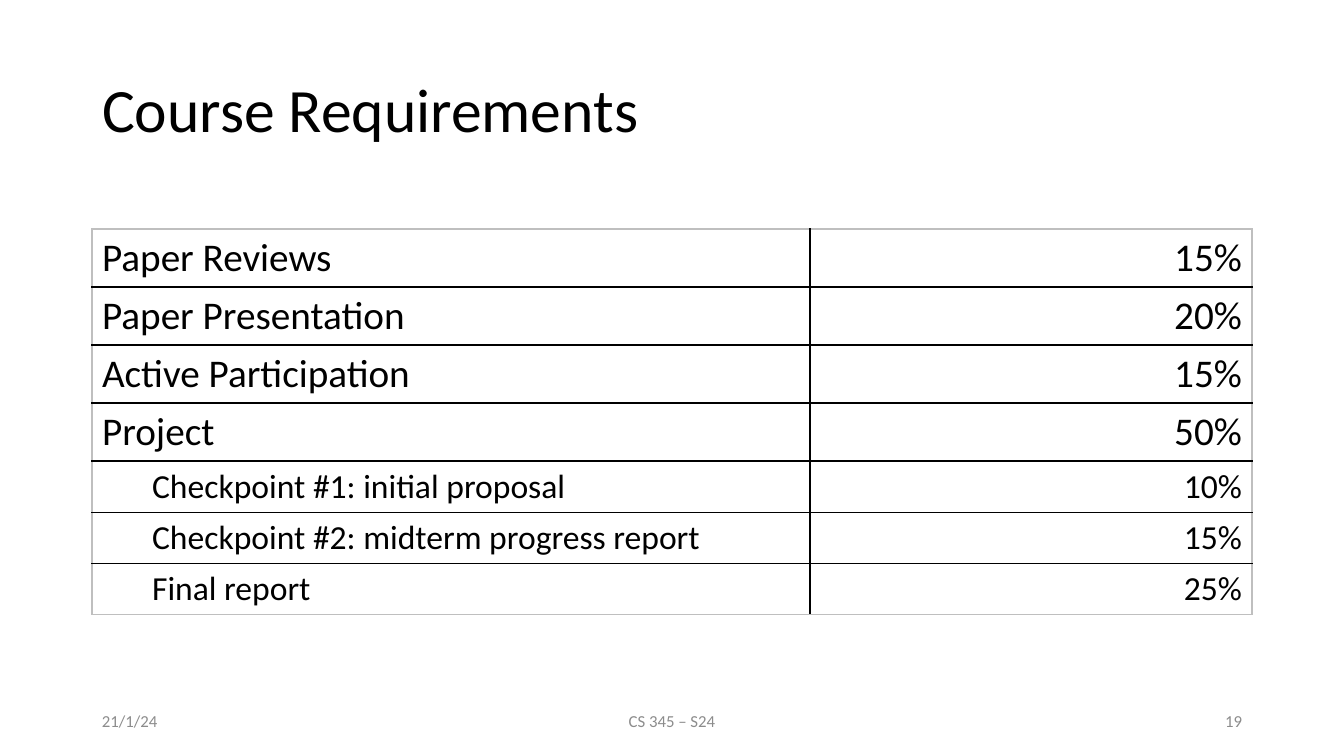
"""Build the Course Requirements slide with its grading table."""
import pptx
import pptx.util
import pptx.dml.color
import pptx.enum.text
import pptx.oxml

PX = 914400 / 100.8
COLORS = {"text": "000000", "footer": "8C8C8C", "inner": "000000", "outer": "BFBFBF"}
ALIGN = pptx.enum.text.PP_ALIGN
MIDDLE = pptx.enum.text.MSO_ANCHOR.MIDDLE
NS = "http://schemas.openxmlformats.org/drawingml/2006/main"


def px(*lengths):
    return [pptx.util.Emu(round(length * PX)) for length in lengths]


def write(frame, text, size, color, align=ALIGN.LEFT):
    paragraph = frame.paragraphs[0]
    paragraph.alignment = align
    run = paragraph.add_run()
    run.text = text
    for key, value in {"name": "Calibri", "size": pptx.util.Pt(size), "bold": False}.items():
        setattr(run.font, key, value)
    run.font.color.rgb = pptx.dml.color.RGBColor.from_string(COLORS[color])
    return paragraph


deck = pptx.Presentation()
deck.slide_width, deck.slide_height = px(1344, 756)
slide = deck.slides.add_slide(deck.slide_layouts[5])

title = slide.shapes.title
title.left, title.top, title.width, title.height = px(92, 40, 1160, 146)
title.text_frame.vertical_anchor = MIDDLE
write(title.text_frame, "Course Requirements", 44, "text").line_spacing = 0.9

requirements = [
    ("Paper Reviews", "15%", 0),
    ("Paper Presentation", "20%", 0),
    ("Active Participation", "15%", 0),
    ("Project", "50%", 0),
    ("Checkpoint #1: initial proposal", "10%", 1),
    ("Checkpoint #2: midterm progress report", "15%", 1),
    ("Final report", "25%", 1),
]
SIZES = [28, 24]
ROW_HEIGHTS = [58, 51]
last_row = len(requirements) - 1
table_height = sum(ROW_HEIGHTS[level] for _, _, level in requirements)
grading = slide.shapes.add_table(len(requirements), 2, *px(92, 229, 1160, table_height)).table
grading.first_row = grading.horz_banding = False
for column, width in zip(grading.columns, px(718, 442)):
    column.width = width

for r, (requirement, weight, level) in enumerate(requirements):
    grading.rows[r].height = px(ROW_HEIGHTS[level])[0]
    for c, (text, align) in enumerate([(requirement, ALIGN.LEFT), (weight, ALIGN.RIGHT)]):
        cell = grading.cell(r, c)
        paragraph = write(cell.text_frame, text, SIZES[level], "text", align)
        if level and c == 0:
            paragraph.level = level
            paragraph._p.get_or_add_pPr().set("marL", str(px(50)[0]))
        edges = {"lnL": c == 0, "lnR": c == 1, "lnT": r == 0, "lnB": r == last_row}
        for edge, is_outer in edges.items():
            color = COLORS["outer" if is_outer else "inner"]
            cell._tc.get_or_add_tcPr().append(pptx.oxml.parse_xml(
                f'<a:{edge} xmlns:a="{NS}" w="12700"><a:solidFill>'
                f'<a:srgbClr val="{color}"/></a:solidFill></a:{edge}>'))
        cell.fill.background()

footers = [
    ("21/1/24", 92, 302, ALIGN.LEFT),
    ("CS 345 – S24", 445, 454, ALIGN.CENTER),
    ("19", 950, 302, ALIGN.RIGHT),
]
for text, left, width, align in footers:
    footer = slide.shapes.add_textbox(*px(left, 701, width, 40)).text_frame
    footer.word_wrap = True
    footer.vertical_anchor = MIDDLE
    write(footer, text, 12, "footer", align)

deck.save("out.pptx")
